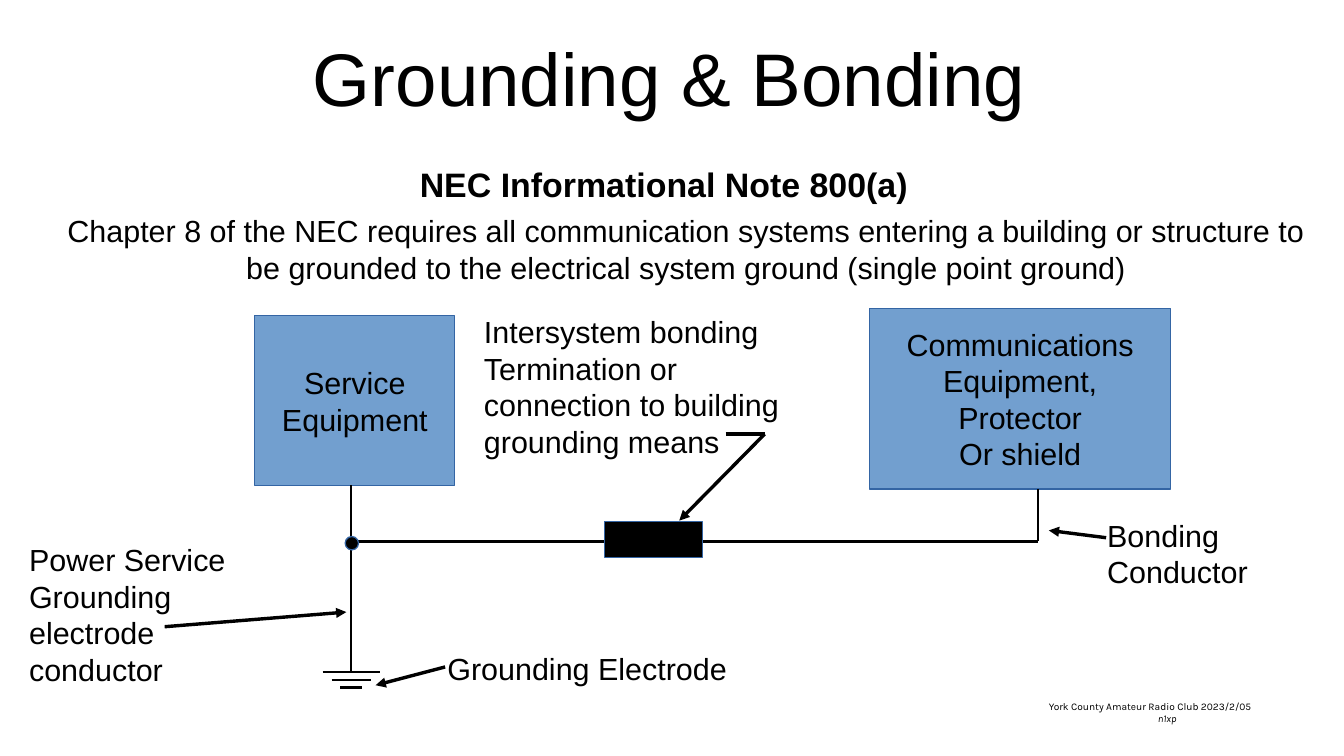
from dataclasses import dataclass

from lxml.etree import SubElement
from pptx import Presentation
from pptx.dml.color import RGBColor as Color
from pptx.enum.shapes import MSO_CONNECTOR as Connector, MSO_SHAPE as Shape
from pptx.enum.text import MSO_ANCHOR as Anchor, PP_ALIGN as Align
from pptx.oxml.ns import qn
from pptx.util import Inches, Pt


@dataclass(frozen=True)
class Theme:
    ink: Color = Color(0, 0, 0)
    box: Color = Color(0x72, 0x9F, 0xCF)
    outline: Color = Color(0x34, 0x65, 0xA4)
    face: str = "Arial"
    footer_face: str = "Karla"
    title: Pt = Pt(44)
    heading: Pt = Pt(20)
    body: Pt = Pt(18)
    footer: Pt = Pt(6)
    wire: Pt = Pt(1.45)
    hairline: Pt = Pt(0)


THEME = Theme()
COLUMNS, ROWS = 110.2, 62
CELL = Inches(0.1)


def cells(*counts):
    return [round(count * CELL) for count in counts]


def apply_format(target, values):
    for name, value in values.items():
        setattr(target, name, value)


def write_lines(shape, lines, align, frame_format=None, **font_format):
    frame = shape.text_frame
    apply_format(frame, {"word_wrap": True, "vertical_anchor": Anchor.TOP, **(frame_format or {})})
    for index, line in enumerate(lines):
        paragraph = frame.add_paragraph() if index else frame.paragraphs[0]
        paragraph.alignment = align
        run = paragraph.add_run()
        run.text = line
        apply_format(run.font, {"name": THEME.face, "size": THEME.body, **font_format})
        run.font.color.rgb = THEME.ink


def add_label(slide, place, *lines, align=Align.LEFT, frame_format=None, **font_format):
    label = slide.shapes.add_textbox(*cells(*place))
    write_lines(label, lines, align, frame_format, **font_format)
    return label


def add_block(slide, place, fill, *lines, kind=Shape.RECTANGLE):
    block = slide.shapes.add_shape(kind, *cells(*place))
    block.shadow.inherit = False
    block.fill.solid()
    block.fill.fore_color.rgb = fill
    block.line.color.rgb = THEME.outline
    block.line.width = THEME.hairline
    if lines:
        write_lines(block, lines, Align.CENTER,
                    {"word_wrap": False, "vertical_anchor": Anchor.MIDDLE})


def add_line(slide, start, end, width=THEME.wire, arrow=False):
    line = slide.shapes.add_connector(Connector.STRAIGHT, *cells(*start, *end))
    line.line.color.rgb = THEME.ink
    line.line.width = width
    properties = line._element.spPr
    if arrow:
        SubElement(properties.find(qn("a:ln")), qn("a:tailEnd"), type="triangle")
    SubElement(properties, qn("a:effectLst"))


def add_text(slide):
    add_label(slide, (13.4, 2.1, 83, 7.8), "Grounding & Bonding",
              align=Align.CENTER, size=THEME.title)
    add_label(slide, (20.1, 12.9, 68.7, 6.6), "NEC Informational Note 800(a)",
              align=Align.CENTER, size=THEME.heading, bold=True)
    add_label(slide, (3.4, 16.9, 105.7, 6.6),
              "Chapter 8 of the NEC requires all communication systems entering a building "
              "or structure to be grounded to the electrical system ground (single point ground)",
              align=Align.CENTER)
    margins = ("margin_left", "margin_right", "margin_top", "margin_bottom")
    footer_frame = {"vertical_anchor": Anchor.MIDDLE, **dict.fromkeys(margins, Inches(0.04))}
    footer = add_label(slide, (85.6, 57.1, 20.2, 2.7),
                       "York County Amateur Radio Club 2023/2/05", "n1xp",
                       frame_format=footer_frame, name=THEME.footer_face, size=THEME.footer)
    call_sign = footer.text_frame.paragraphs[1]
    call_sign.alignment = Align.CENTER
    call_sign.runs[0].font.italic = True


def add_circuit(slide):
    ground_x, bond_x, bus_y, earth_y = 28.8, 85.1, 44.4, 55.1
    add_block(slide, (20.9, 25.9, 16.4, 13.9), THEME.box, "Service", "Equipment")
    add_block(slide, (71.3, 25.3, 24.7, 14.8), THEME.box,
              "Communications", "Equipment,", "Protector", "Or shield")
    add_line(slide, (ground_x, 39.8), (ground_x, earth_y))
    add_line(slide, (ground_x, bus_y), (bond_x, bus_y))
    add_line(slide, (bond_x, bus_y), (bond_x, 40.1))
    add_block(slide, (49.6, 42.8, 8, 2.9), THEME.ink)
    add_block(slide, (ground_x - 0.5, bus_y - 0.4, 1.1, 1.1), THEME.ink, kind=Shape.OVAL)
    for step, half_width in enumerate((2.35, 1.6, 0.9)):
        bar_y = earth_y + 0.65 * step
        add_line(slide, (ground_x - half_width, bar_y), (ground_x + half_width, bar_y))


def add_callouts(slide):
    callouts = (
        ((89.8, 41.9, 17.7, 6.6), ("Bonding Conductor",), (90.7, 44.1), (86, 43.5)),
        ((38.7, 25.2, 27, 12.3),
         ("Intersystem bonding", "Termination or connection to building grounding means"),
         (62.7, 35.6), (55.7, 42.7)),
        ((1.4, 43.9, 24.6, 9.4), ("Power Service", "Grounding electrode", "conductor"),
         (13.5, 51.4), (28.4, 50.2)),
        ((35.7, 52.8, 26.7, 6.6), ("Grounding Electrode",), (36.5, 54.7), (30.8, 56.2)),
    )
    for place, lines, start, end in callouts:
        add_label(slide, place, *lines)
        add_line(slide, start, end, THEME.hairline, arrow=True)
    add_line(slide, (59.5, 35.6), (62.7, 35.6), THEME.hairline)


def main():
    presentation = Presentation()
    presentation.slide_width, presentation.slide_height = cells(COLUMNS, ROWS)
    slide = presentation.slides.add_slide(presentation.slide_layouts[6])
    add_text(slide)
    add_circuit(slide)
    add_callouts(slide)
    presentation.save("out.pptx")


if __name__ == "__main__":
    main()
